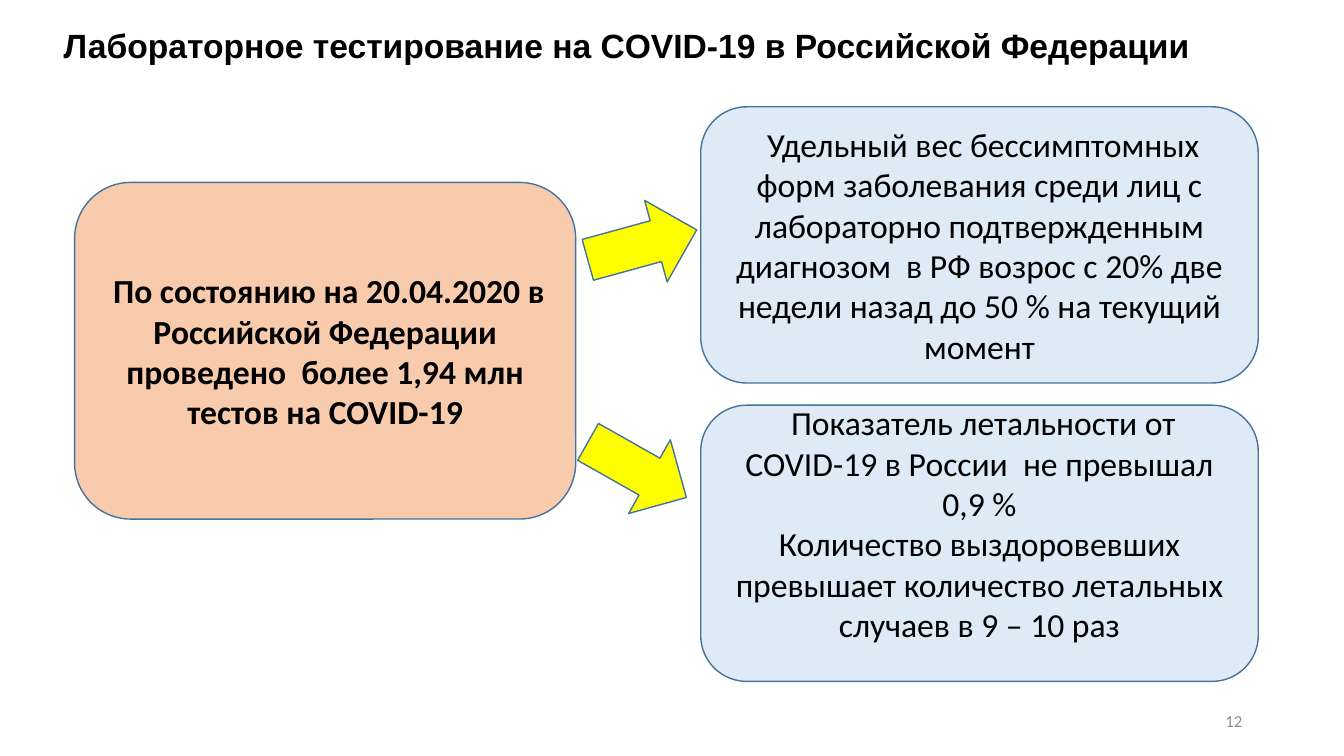
import pptx
import pptx.util
import pptx.dml.color
import pptx.enum.shapes
import pptx.enum.text

Inches, Pt = pptx.util.Inches, pptx.util.Pt
RGBColor = pptx.dml.color.RGBColor
Kind = pptx.enum.shapes.MSO_SHAPE
Align = pptx.enum.text.PP_ALIGN
Anchor = pptx.enum.text.MSO_ANCHOR

BLACK = RGBColor(0x00, 0x00, 0x00)
GREY = RGBColor(0x8C, 0x8C, 0x8C)
PEACH = RGBColor(0xF8, 0xCB, 0xAD)
PALE = RGBColor(0xDE, 0xEB, 0xF7)
YELLOW = RGBColor(0xFF, 0xFF, 0x00)
BLUE = RGBColor(0x43, 0x73, 0x9E)

# Content
TITLE = "Лабораторное тестирование на COVID-19 в Российской Федерации"
TESTS = [" По состоянию на 20.04.2020 в Российской Федерации проведено  более 1,94 млн тестов на COVID-19"]
FACTS = [
    ([" Удельный вес бессимптомных форм заболевания среди лиц с лабораторно подтвержденным "
      "диагнозом  в РФ возрос с 20% две недели назад до 50 % на текущий момент"], 0.05),
    ([" Показатель летальности от COVID-19 в России  не превышал 0,9 %",
      "Количество выздоровевших превышает количество летальных случаев в 9 – 10 раз"], 0.45),
]
ARROWS = [(5.76, 4.24, 29.5), (5.81, 2.01, -15.4)]  # left, top, turn
NUMBER = "12"

# Layout
FACT_TOP, FACT_STEP = 1.06, 2.96


def write(shape, lines, size=24, font="Calibri", color=BLACK, bold=False,
          align=Align.CENTER, anchor=Anchor.MIDDLE, foot=0.05):
    frame = shape.text_frame
    frame.word_wrap = True
    frame.auto_size = pptx.enum.text.MSO_AUTO_SIZE.NONE
    frame.vertical_anchor = anchor
    frame.margin_bottom = Inches(foot)
    frame.text = "\n".join(lines)
    for para in frame.paragraphs:
        para.alignment = align
        para.font.size = Pt(size)
        para.font.name = font
        para.font.bold = bold
        para.font.color.rgb = color


def draw(slide, kind, fill, *place):
    shape = slide.shapes.add_shape(kind, *map(Inches, place))
    shape.shadow.inherit = False
    shape.fill.solid()
    shape.fill.fore_color.rgb = fill
    shape.line.color.rgb = BLUE
    shape.line.width = Pt(1)
    return shape


def main():
    deck = pptx.Presentation()
    deck.slide_width, deck.slide_height = Inches(13.33), Inches(7.5)
    slide = deck.slides.add_slide(deck.slide_layouts[5])

    # Title
    title = slide.shapes.title
    title.left, title.top = Inches(0.53), Inches(0.2)
    title.width, title.height = Inches(11.59), Inches(0.5)
    write(title, [TITLE], font="Arial", bold=True, align=Align.LEFT, anchor=Anchor.TOP)

    # Tests on the left, facts on the right
    tests = draw(slide, Kind.ROUNDED_RECTANGLE, PEACH, 0.74, 1.81, 4.97, 3.34)
    write(tests, TESTS, bold=True)
    for row, (lines, foot) in enumerate(FACTS):
        top = FACT_TOP + row * FACT_STEP
        fact = draw(slide, Kind.ROUNDED_RECTANGLE, PALE, 6.95, top, 5.53, 2.74)
        write(fact, lines, foot=foot)

    # Arrows
    for left, top, turn in ARROWS:
        arrow = draw(slide, Kind.RIGHT_ARROW, YELLOW, left, top, 1.12, 0.84)
        arrow.rotation = turn

    # Slide number
    number = slide.shapes.add_textbox(*map(Inches, (9.42, 6.95, 3, 0.4)))
    write(number, [NUMBER], size=12, color=GREY, align=Align.RIGHT)

    deck.save("out.pptx")


if __name__ == "__main__":
    main()
